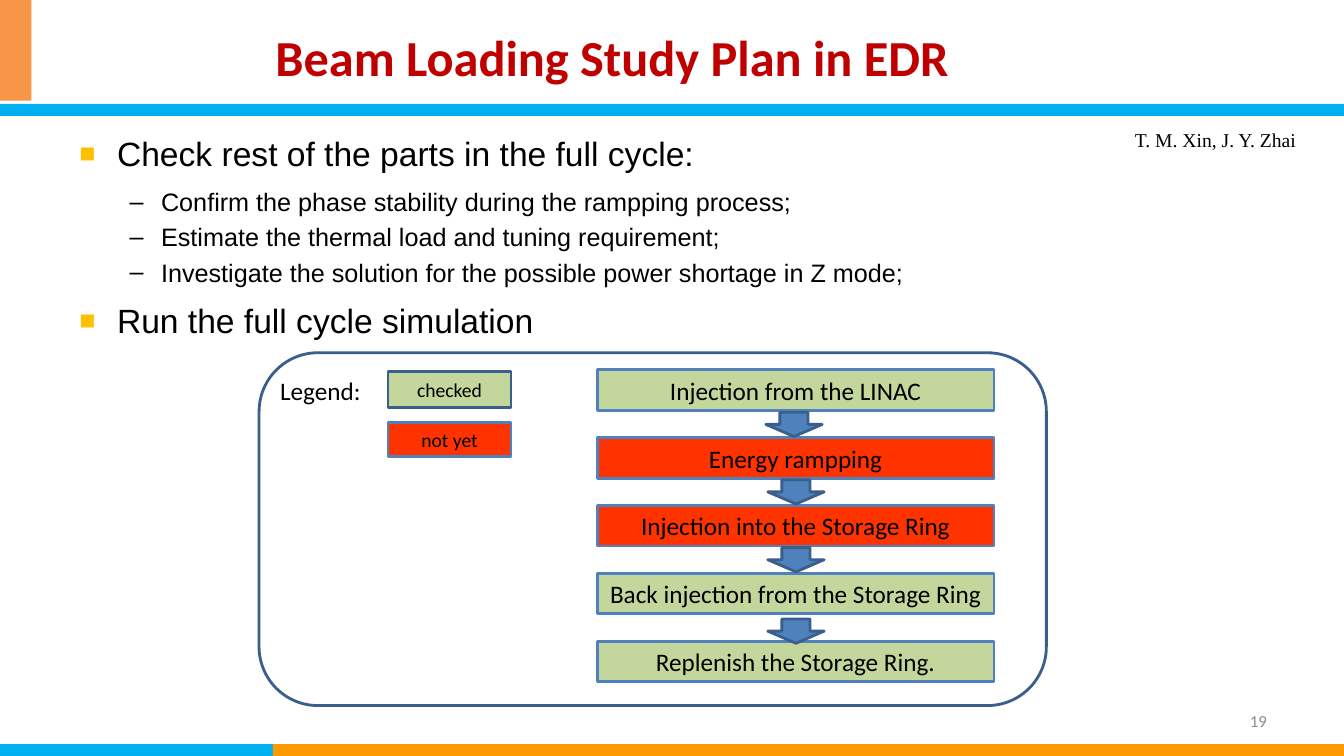
import pptx
import pptx.dml.color
import pptx.enum.shapes
import pptx.enum.text
import pptx.oxml.ns
import pptx.util
from lxml import etree

Cm = pptx.util.Cm
Pt = pptx.util.Pt
RGBColor = pptx.dml.color.RGBColor
Shape = pptx.enum.shapes.MSO_SHAPE
Align = pptx.enum.text.PP_ALIGN
Anchor = pptx.enum.text.MSO_ANCHOR
qn = pptx.oxml.ns.qn

BLACK = RGBColor(0x00, 0x00, 0x00)
GRAY = RGBColor(0x8C, 0x8C, 0x8C)
DARK_RED = RGBColor(0xC0, 0x00, 0x00)
SKY = RGBColor(0x00, 0xB0, 0xF0)
ORANGE = RGBColor(0xFF, 0x99, 0x00)
PEACH = RGBColor(0xF7, 0x96, 0x46)
GOLD = RGBColor(0xFF, 0xC0, 0x00)
GREEN = RGBColor(0xC3, 0xD6, 0x9B)
RED = RGBColor(0xFF, 0x33, 0x00)
BLUE = RGBColor(0x4F, 0x81, 0xBD)
NAVY = RGBColor(0x3A, 0x5F, 0x8C)


class SlideBuilder:
    font = "Calibri"
    line_width = Pt(2)

    def __init__(self, presentation):
        self.slide = presentation.slides.add_slide(presentation.slide_layouts[5])

    def add_text(self, paragraph, text, size, color=BLACK, font=None, bold=False, align=Align.LEFT):
        paragraph.alignment = align
        run = paragraph.add_run()
        run.text = text
        run.font.name = font or self.font
        run.font.size = Pt(size)
        run.font.bold = bold
        run.font.color.rgb = color

    def title(self, text, left, top, width, height):
        shape = self.slide.shapes.title
        shape.left, shape.top = Cm(left), Cm(top)
        shape.width, shape.height = Cm(width), Cm(height)
        shape.text_frame.vertical_anchor = Anchor.MIDDLE
        self.add_text(shape.text_frame.paragraphs[0], text, 36, DARK_RED, bold=True, align=Align.CENTER)

    def shape(self, kind, left, top, width, height, fill=None, line=None):
        shape = self.slide.shapes.add_shape(kind, Cm(left), Cm(top), Cm(width), Cm(height))
        shape.shadow.inherit = False
        if fill is None:
            shape.fill.background()
        else:
            shape.fill.solid()
            shape.fill.fore_color.rgb = fill
        if line is None:
            shape.line.fill.background()
        else:
            shape.line.color.rgb = line
            shape.line.width = self.line_width
        return shape

    def box(self, text, left, top, width, height, fill, line=BLUE, size=18):
        shape = self.shape(Shape.RECTANGLE, left, top, width, height, fill, line)
        shape.text_frame.vertical_anchor = Anchor.MIDDLE
        self.add_text(shape.text_frame.paragraphs[0], text, size, align=Align.CENTER)

    def text_frame(self, left, top, width, height, wrap=True):
        shape = self.slide.shapes.add_textbox(Cm(left), Cm(top), Cm(width), Cm(height))
        shape.text_frame.word_wrap = wrap
        return shape.text_frame

    def label(self, text, left, top, width, height, size, wrap=True, **style):
        frame = self.text_frame(left, top, width, height, wrap)
        frame.vertical_anchor = Anchor.MIDDLE
        self.add_text(frame.paragraphs[0], text, size, **style)

    def bullet(self, paragraph, character, margin, hanging, color=None, percent=100):
        properties = paragraph._p.get_or_add_pPr()
        properties.set("marL", str(Cm(margin)))
        properties.set("indent", str(-Cm(hanging)))
        if color is not None:
            bullet_color = etree.SubElement(properties, qn("a:buClr"))
            etree.SubElement(bullet_color, qn("a:srgbClr")).set("val", str(color))
        etree.SubElement(properties, qn("a:buSzPct")).set("val", str(percent * 1000))
        etree.SubElement(properties, qn("a:buFont")).set("typeface", "Arial")
        etree.SubElement(properties, qn("a:buChar")).set("char", character)

    def outline(self, items, left, top, width, height):
        frame = self.text_frame(left, top, width, height)
        for index, (level, text, before, after) in enumerate(items):
            paragraph = frame.add_paragraph() if index else frame.paragraphs[0]
            paragraph.level = level
            paragraph.space_before = Pt(before)
            paragraph.space_after = Pt(after)
            paragraph.line_spacing = 1.0 if level else 1.1
            if level:
                self.bullet(paragraph, "–", 2.06, 0.79)
            else:
                self.bullet(paragraph, "■", 0.95, 0.95, GOLD, 80)
            self.add_text(paragraph, text, 18 if level else 24, font="Arial")


def main():
    presentation = pptx.Presentation()
    presentation.slide_width, presentation.slide_height = Cm(33.87), Cm(19.05)
    builder = SlideBuilder(presentation)

    bands = [
        (0, 18.75, 33.87, 0.3, SKY),
        (6.88, 18.75, 26.99, 0.3, ORANGE),
        (0, 2.62, 33.87, 0.3, SKY),
        (0, 0, 0.79, 2.54, PEACH),
    ]
    for left, top, width, height, color in bands:
        builder.shape(Shape.RECTANGLE, left, top, width, height, color)

    builder.title("Beam Loading Study Plan in EDR", 0.48, 0.41, 29.9, 2)
    builder.outline([
        (0, "Check rest of the parts in the full cycle:", 0, 6),
        (1, "Confirm the phase stability during the rampping process;", 3.6, 0),
        (1, "Estimate the thermal load and tuning requirement;", 3.6, 0),
        (1, "Investigate the solution for the possible power shortage in Z mode;", 3.6, 0),
        (0, "Run the full cycle simulation", 6, 10),
    ], 1.75, 3.12, 30.48, 13.44)

    steps = [
        ("Injection from the LINAC", GREEN),
        ("Energy rampping", RED),
        ("Injection into the Storage Ring", RED),
        ("Back injection from the Storage Ring", GREEN),
        ("Replenish the Storage Ring.", GREEN),
    ]
    for index, (text, color) in enumerate(steps):
        builder.box(text, 15.05, 9.32 + 1.71 * index, 10, 1.02, color)

    builder.box("checked", 9.78, 9.37, 3.1, 0.91, GREEN, NAVY, 14)
    builder.box("not yet", 9.78, 10.64, 3.1, 0.86, RED, size=14)
    builder.label("Legend:", 6.81, 9.32, 2.59, 1.02, 18, wrap=False)

    for left, top in [(19.3, 10.39), (19.35, 12.09), (19.35, 13.8), (19.35, 15.6)]:
        builder.shape(Shape.DOWN_ARROW, left, top, 1.42, 0.61, BLUE, NAVY)

    builder.shape(Shape.ROUNDED_RECTANGLE, 6.53, 8.89, 19.84, 8.89, line=NAVY)
    builder.label("19", 24.28, 17.65, 7.9, 1.02, 12, color=GRAY, align=Align.RIGHT)
    builder.label("T. M. Xin, J. Y. Zhai", 28.35, 3.1, 5.5, 0.86, 14, font="Times New Roman")

    presentation.save("out.pptx")


if __name__ == "__main__":
    main()
